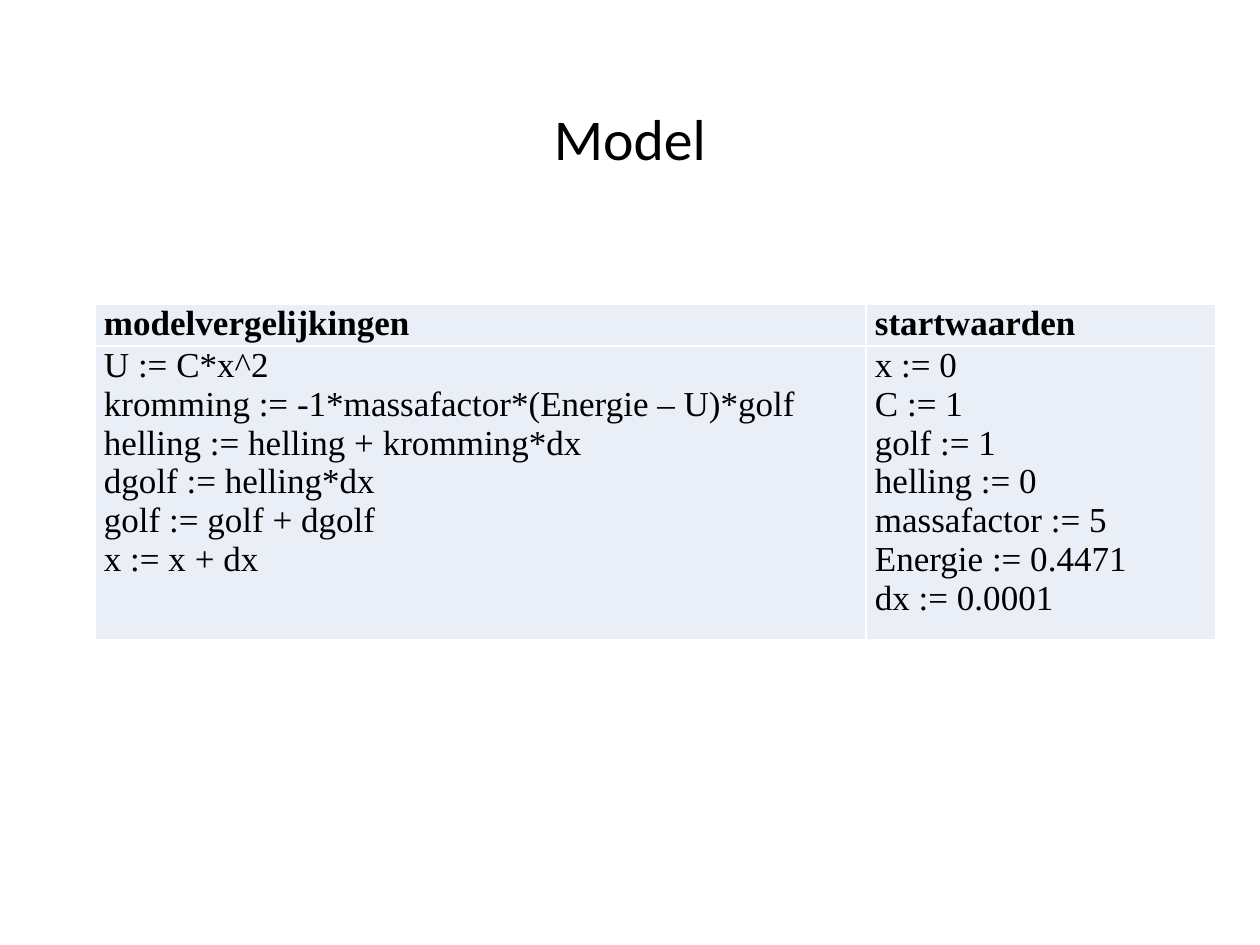
import pptx
import pptx.dml.color
import pptx.enum.text
import pptx.oxml
import pptx.oxml.ns
import pptx.util

PX = 914400 // 126
TITLE = "Model"
COLUMNS = [
    ("modelvergelijkingen", [
        "U := C*x^2",
        "kromming := -1*massafactor*(Energie – U)*golf",
        "helling := helling + kromming*dx",
        "dgolf := helling*dx",
        "golf := golf + dgolf",
        "x := x + dx",
    ]),
    ("startwaarden", [
        "x := 0",
        "C := 1",
        "golf := 1",
        "helling := 0",
        "massafactor := 5",
        "Energie := 0.4471",
        "dx := 0.0001",
    ]),
]
TITLE_BOX = (87, 50, 1086, 183)
TABLE_LEFT, TABLE_TOP = 95, 304
COLUMN_WIDTHS = [771, 350]
ROW_HEIGHTS = [38, 271]
CELL_MARGIN = 9


def px(length):
    return pptx.util.Emu(length * PX)


def color(value):
    return pptx.dml.color.RGBColor.from_string(value)


def write(frame, lines, font="Times New Roman", size=20, bold=False,
          align=pptx.enum.text.PP_ALIGN.LEFT, spacing=1.0):
    frame.word_wrap = True
    for index, line in enumerate(lines):
        paragraph = frame.add_paragraph() if index else frame.paragraphs[0]
        paragraph.alignment = align
        paragraph.line_spacing = spacing
        run = paragraph.add_run()
        run.text = line
        run.font.name = font
        run.font.size = pptx.util.Pt(size)
        run.font.bold = bold
        run.font.color.rgb = color("000000")


def add_borders(cell, value="FFFFFF", points=1):
    """Draw all four sides; border elements must precede the cell fill."""
    properties = cell._tc.get_or_add_tcPr()
    for index, side in enumerate(("lnL", "lnR", "lnT", "lnB")):
        properties.insert(index, pptx.oxml.parse_xml(
            f'<a:{side} {pptx.oxml.ns.nsdecls("a")} w="{pptx.util.Pt(points)}">'
            f'<a:solidFill><a:srgbClr val="{value}"/></a:solidFill></a:{side}>'))


def fill_cell(cell, lines, bold):
    cell.margin_left = cell.margin_right = px(CELL_MARGIN)
    cell.margin_top = cell.margin_bottom = 0
    cell.fill.solid()
    cell.fill.fore_color.rgb = color("EAEFF7")
    add_borders(cell)
    write(cell.text_frame, lines, bold=bold)


def main():
    presentation = pptx.Presentation()
    presentation.slide_width = pptx.util.Inches(10)
    presentation.slide_height = pptx.util.Inches(7.5)
    slide = presentation.slides.add_slide(presentation.slide_layouts[6])

    title = slide.shapes.add_textbox(*map(px, TITLE_BOX))
    title.text_frame.vertical_anchor = pptx.enum.text.MSO_ANCHOR.MIDDLE
    write(title.text_frame, [TITLE], font="Calibri", size=33,
          align=pptx.enum.text.PP_ALIGN.CENTER, spacing=0.9)

    table = slide.shapes.add_table(
        len(ROW_HEIGHTS), len(COLUMNS), px(TABLE_LEFT), px(TABLE_TOP),
        px(sum(COLUMN_WIDTHS)), px(sum(ROW_HEIGHTS))).table
    for row, height in zip(table.rows, ROW_HEIGHTS):
        row.height = px(height)
    for index, (heading, lines) in enumerate(COLUMNS):
        table.columns[index].width = px(COLUMN_WIDTHS[index])
        fill_cell(table.cell(0, index), [heading], bold=True)
        fill_cell(table.cell(1, index), lines, bold=False)

    presentation.save("out.pptx")


if __name__ == "__main__":
    main()
